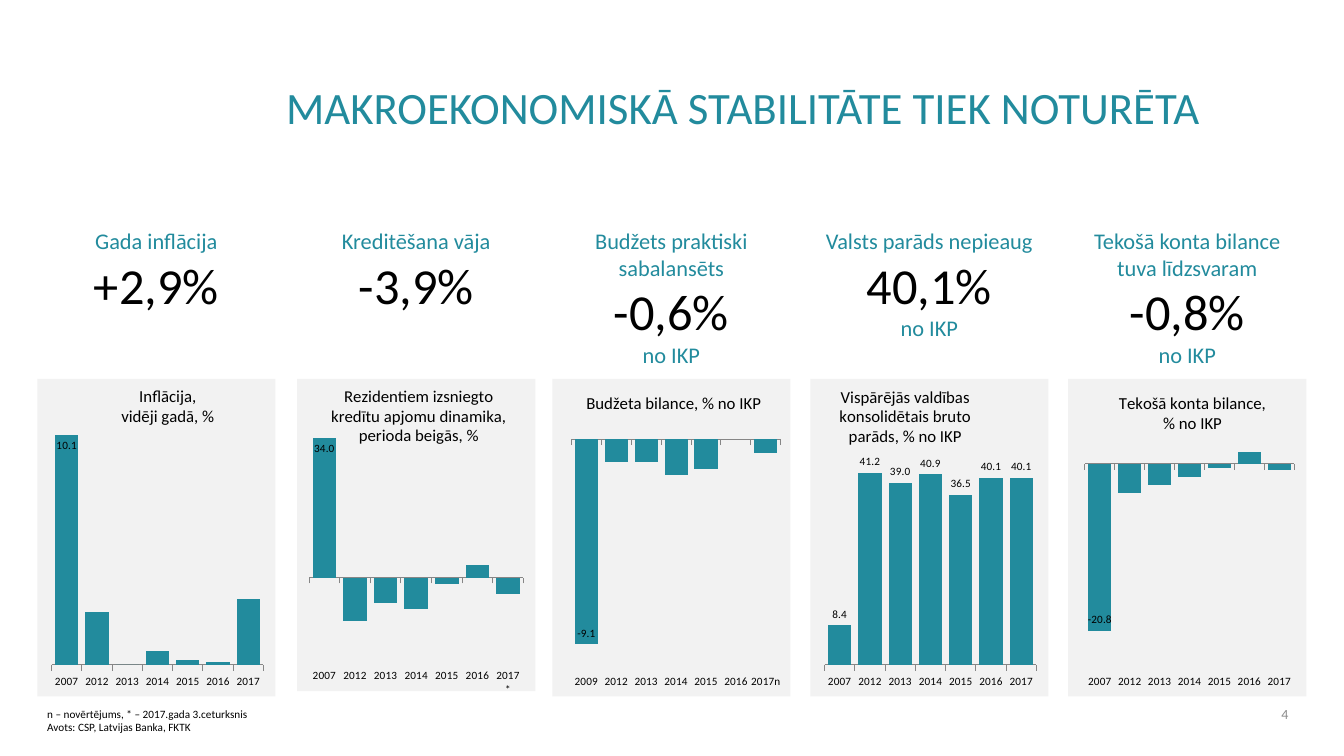
"""Build the slide on macroeconomic stability with five indicator charts."""
from lxml import etree
from pptx import Presentation
from pptx.chart.data import CategoryChartData
from pptx.dml.color import RGBColor
from pptx.enum.chart import XL_CHART_TYPE, XL_LABEL_POSITION, XL_TICK_LABEL_POSITION, XL_TICK_MARK
from pptx.enum.text import MSO_ANCHOR, PP_ALIGN
from pptx.oxml import parse_xml
from pptx.oxml.ns import nsdecls, qn
from pptx.util import Cm, Pt

COLUMN = XL_CHART_TYPE.COLUMN_CLUSTERED
INSIDE, OUTSIDE = XL_LABEL_POSITION.INSIDE_END, XL_LABEL_POSITION.OUTSIDE_END
LOW = XL_TICK_LABEL_POSITION.LOW
NONE, OUT = XL_TICK_MARK.NONE, XL_TICK_MARK.OUTSIDE
LEFT, CENTER, RIGHT = PP_ALIGN.LEFT, PP_ALIGN.CENTER, PP_ALIGN.RIGHT
TOP, MIDDLE, BOTTOM = MSO_ANCHOR.TOP, MSO_ANCHOR.MIDDLE, MSO_ANCHOR.BOTTOM

COLORS = {"teal": "228B9D", "black": "000000", "gray": "8C8C8C", "axis": "868686", "panel": "F2F2F2"}
FONT = "Calibri"
WIDTH = 6
YEARS = ["2012", "2013", "2014", "2015", "2016"]

prs = Presentation()
prs.slide_width, prs.slide_height = Cm(33.87), Cm(19.05)
slide = prs.slides.add_slide(prs.slide_layouts[6])


def add_text(box, lines, align=LEFT, anchor=TOP, space=None):
    """Add a text box; each line is (text, size, colour)."""
    frame = slide.shapes.add_textbox(*[Cm(v) for v in box]).text_frame
    frame.word_wrap = True
    frame.vertical_anchor = anchor
    frame.text = "\n".join(line[0] for line in lines)
    for para, (_, size, color) in zip(frame.paragraphs, lines):
        para.alignment = align
        para.line_spacing = space
        para.font.name = FONT
        para.font.size = Pt(size)
        para.font.color.rgb = RGBColor.from_string(COLORS[color])


def make_layout(inner, **sizes):
    """Return a manual chart layout with the given fractions."""
    layout = parse_xml(f"<c:layout {nsdecls('c')}><c:manualLayout/></c:layout>")
    modes = {"xMode": "edge", "yMode": "edge"}
    if inner:
        modes = {"layoutTarget": "inner", **modes}
    for name, val in {**modes, **sizes}.items():
        etree.SubElement(layout[0], qn(f"c:{name}")).set("val", str(val))
    return layout


add_text((6.96, 0.91, 24, 2.59), [("MAKROEKONOMISKĀ STABILITĀTE TIEK NOTURĒTA", 32, "teal")],
         anchor=BOTTOM, space=0.9)

panels = [
    dict(left=0.94, head="Gada inflācija", value="+2,9%", unit="", tall=2.49,
         title="Inflācija,\nvidēji gadā, %", spot=(0.34, 0.01), plot=(0.06, 0.04, 0.89, 0.86),
         first="2007", last="2017", vals=[10.1, 2.3, 0, 0.6, 0.2, 0.1, 2.9],
         span=(0, 12), inside=True, form="General"),
    dict(left=7.49, head="Kreditēšana vāja", value="-3,9%", unit="", tall=2.49,
         title="Rezidentiem izsniegto\nkredītu apjomu dinamika,\nperioda beigās, %",
         spot=(0.13, 0.01), plot=(0.05, 0.11, 0.9, 0.79),
         first="2007", last="2017*", vals=[34, -10.5, -6.2, -7.6, -1.5, 3.1, -3.9],
         span=(-20, 40), inside=True, form="#,##0.0"),
    dict(left=13.92, head="Budžets praktiski sabalansēts", value="-0,6%", unit="no IKP", tall=3.84,
         title="Budžeta bilance, % no IKP", spot=(0.13, 0.03), plot=(0.08, 0.19, 0.88, 0.71),
         first="2009", last="2017n", vals=[-9.1, -1, -1, -1.6, -1.3, 0, -0.6],
         span=(-10, 0), inside=True, form="#,##0.0"),
    dict(left=20.42, head="Valsts parāds nepieaug", value="40,1%", unit="no IKP", tall=3.18,
         title="Vispārējās valdības\nkonsolidētais bruto\nparāds, % no IKP",
         spot=(0.11, 0.01), plot=(0.06, 0.24, 0.89, 0.66),
         first="2007", last="2017", vals=[8.4, 41.2, 39, 40.9, 36.5, 40.1, 40.1],
         span=(0, 45), inside=False, form="#,##0.0"),
    dict(left=26.92, head="Tekošā konta bilance tuva līdzsvaram", value="-0,8%", unit="no IKP",
         tall=3.84, title="Tekošā konta bilance,\n% no IKP", spot=(0.2, 0.03),
         plot=(0.07, 0.14, 0.88, 0.76),
         first="2007", last="2017", vals=[-20.8, -3.6, -2.7, -1.7, -0.5, 1.4, -0.8],
         span=(-25, 5), inside=True, form="#,##0.0"),
]

for panel in panels:
    lines = [(panel["head"], 16, "teal"), (panel["value"], 36, "black")]
    if panel["unit"]:
        lines.append((panel["unit"], 16, "teal"))
    add_text((panel["left"], 5.59, WIDTH, panel["tall"]), lines, CENTER)

    data = CategoryChartData(number_format=panel["form"])
    data.categories = [panel["first"], *YEARS, panel["last"]]
    data.add_series("Series 1", panel["vals"])
    chart = slide.shapes.add_chart(COLUMN, Cm(panel["left"]), Cm(9.55), Cm(WIDTH), Cm(8), data).chart
    chart.has_legend = False
    chart.font.name = FONT
    chart.font.size = Pt(8)
    chart.font.color.rgb = RGBColor.from_string(COLORS["black"])

    chart.has_title = True
    title = chart.chart_title
    title.text_frame.text = panel["title"]
    for para in title.text_frame.paragraphs:
        para.alignment = CENTER
        para.font.name = FONT
        para.font.size = Pt(12)
        para.font.bold = False
        para.font.color.rgb = RGBColor.from_string(COLORS["black"])

    plot = chart.plots[0]
    plot.gap_width = 30
    plot.vary_by_categories = False
    plot.has_data_labels = True
    labels = plot.data_labels
    labels.show_value = True
    labels.position = OUTSIDE
    labels.number_format = panel["form"]
    labels.number_format_is_linked = False
    bars = plot.series[0]
    bars.invert_if_negative = False
    bars.format.fill.solid()
    bars.format.fill.fore_color.rgb = RGBColor.from_string(COLORS["teal"])
    if panel["inside"]:
        bars.points[0].data_label.position = INSIDE

    years = chart.category_axis
    years.tick_label_position = LOW
    years.major_tick_mark = OUT
    years.minor_tick_mark = NONE
    years.has_major_gridlines = False
    years.format.line.color.rgb = RGBColor.from_string(COLORS["axis"])
    years.format.line.width = Pt(0.75)
    scale = chart.value_axis
    scale.visible = False
    scale.has_major_gridlines = False
    scale.minimum_scale, scale.maximum_scale = panel["span"]

    space = chart._chartSpace
    area = space.find(".//" + qn("c:plotArea"))
    head = space.find(".//" + qn("c:title"))
    for part in (area, head):
        for old in part.findall(qn("c:layout")):
            part.remove(old)
    area.insert(0, make_layout(True, **dict(zip("xywh", panel["plot"]))))
    head.find(qn("c:tx")).addnext(make_layout(False, **dict(zip("xy", panel["spot"]))))
    title.include_in_layout = True
    fill = (f"<c:spPr {nsdecls('c', 'a')}><a:solidFill><a:srgbClr val=\"{COLORS['panel']}\"/>"
            "</a:solidFill><a:ln><a:noFill/></a:ln></c:spPr>")
    area.append(parse_xml(fill))
    space.find(qn("c:chart")).addnext(parse_xml(fill))

add_text((0.94, 17.7, WIDTH, 0.94), [("n – novērtējums, * – 2017.gada 3.ceturksnis", 8, "black"),
                                     ("Avots: CSP, Latvijas Banka, FKTK", 8, "black")])
add_text((31.6, 17.58, 1.12, 0.84), [("4", 10, "gray")], RIGHT, MIDDLE)

prs.save("out.pptx")
